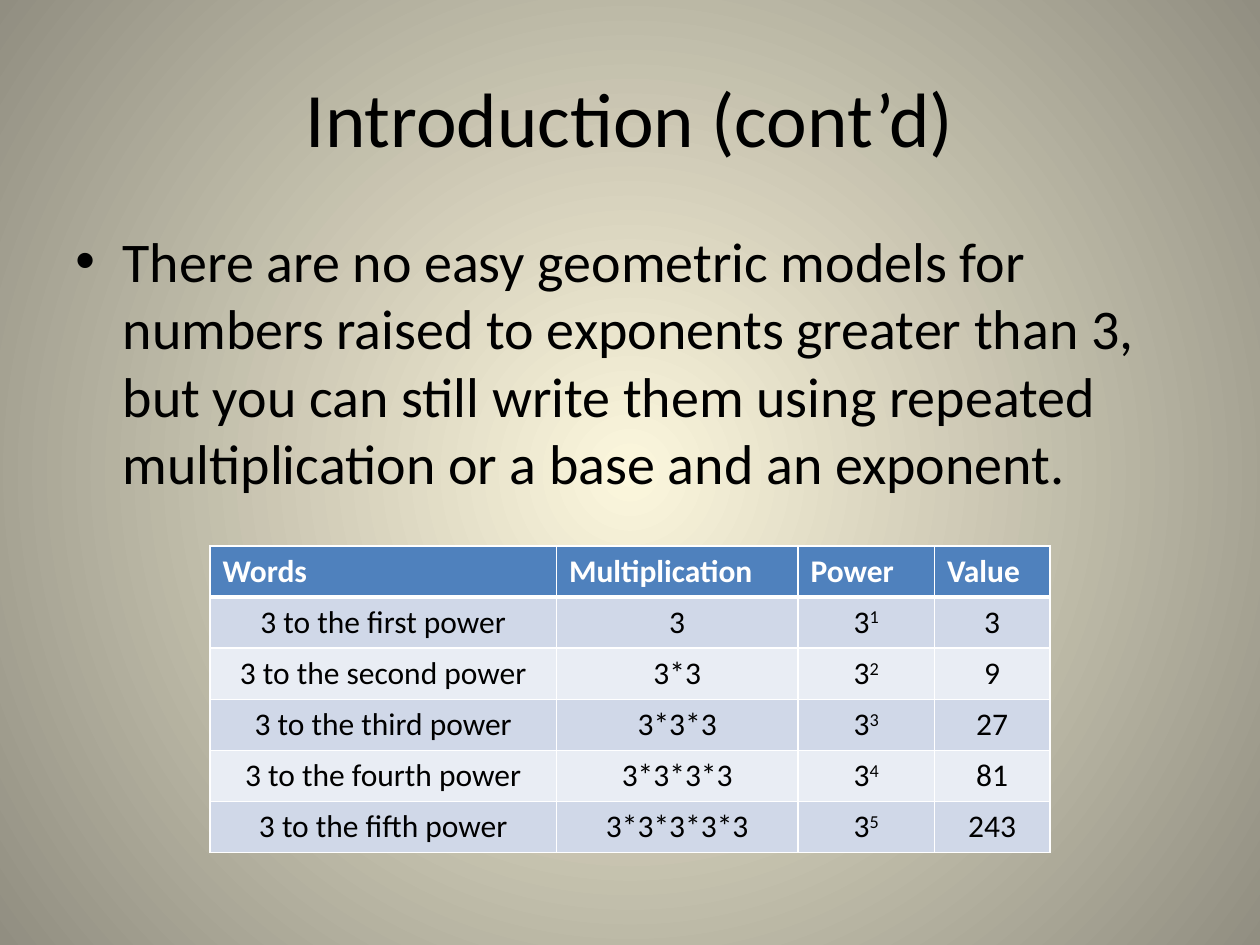
from lxml.etree import SubElement
from pptx import Presentation
from pptx.dml.color import RGBColor
from pptx.enum.text import MSO_ANCHOR, PP_ALIGN
from pptx.oxml import parse_xml
from pptx.oxml.ns import nsdecls, qn
from pptx.util import Pt

BLACK = RGBColor(0x00, 0x00, 0x00)
WHITE = RGBColor(0xFF, 0xFF, 0xFF)
CREAM = RGBColor(0xFC, 0xF7, 0xDD)
STONE = RGBColor(0x91, 0x8E, 0x81)
HEADER_BLUE = RGBColor(0x4F, 0x81, 0xBD)
BANDS = (RGBColor(0xE9, 0xED, 0xF4), RGBColor(0xD0, 0xD8, 0xE8))

HEADINGS = ("Words", "Multiplication", "Power", "Value")
ORDINALS = ("first", "second", "third", "fourth", "fifth")
COLUMN_WIDTHS = (198, 138, 78, 66)
ROW_HEIGHT = 29.2
BASE = 3
STATEMENT = (
    "There are no easy geometric models for numbers raised to exponents "
    "greater than 3, but you can still write them using repeated "
    "multiplication or a base and an exponent."
)


class SlideBuilder:
    """Hold the text style and the current slide, and add its elements."""

    def __init__(self, slide, font_name):
        self.slide = slide
        self.font_name = font_name

    def style(self, font, size, color, **values):
        """Apply the font name and the given values."""
        font.color.rgb = color
        values |= {"name": self.font_name, "size": Pt(size)}
        for key, value in values.items():
            setattr(font, key, value)

    def background(self, center, edge):
        """Fill the slide with a circular gradient."""
        fill = self.slide.background.fill
        fill.gradient()
        for stop, color in zip(fill.gradient_stops, (center, edge)):
            stop.color.rgb = color
        linear = self.slide.element.find(".//" + qn("a:lin"))
        circle = parse_xml(
            f'<a:path {nsdecls("a")} path="circle">'
            '<a:fillToRect l="50000" t="50000" r="50000" b="50000"/></a:path>'
        )
        linear.getparent().replace(linear, circle)

    def title(self, text, left, top, width, height):
        """Place and format the title placeholder."""
        title = self.slide.shapes.title
        box = {"left": left, "top": top, "width": width, "height": height}
        for key, value in box.items():
            setattr(title, key, Pt(value))
        title.text_frame.vertical_anchor = MSO_ANCHOR.MIDDLE
        paragraph = title.text_frame.paragraphs[0]
        paragraph.alignment = PP_ALIGN.CENTER
        run = paragraph.add_run()
        run.text = text
        self.style(run.font, 44, BLACK)

    def bullet(self, text, left, top, width, height):
        """Add a text box with one bulleted paragraph."""
        box = self.slide.shapes.add_textbox(Pt(left), Pt(top), Pt(width), Pt(height))
        box.text_frame.word_wrap = True
        paragraph = box.text_frame.paragraphs[0]
        properties = paragraph._p.get_or_add_pPr()
        properties.set("marL", str(Pt(27)))
        properties.set("indent", str(Pt(-27)))
        SubElement(properties, qn("a:buFont"), typeface="Arial")
        SubElement(properties, qn("a:buChar"), char="•")
        run = paragraph.add_run()
        run.text = text
        self.style(run.font, 32, BLACK)

    def borders(self, cell, widths):
        """Draw white borders on the left, right, top and bottom."""
        properties = cell._tc.get_or_add_tcPr()
        for side, width in zip("LRTB", widths):
            properties.append(parse_xml(
                f'<a:ln{side} {nsdecls("a")} w="{Pt(width)}"><a:solidFill>'
                f'<a:srgbClr val="{WHITE}"/></a:solidFill></a:ln{side}>'
            ))

    def cell(self, cell, row, text, exponent=""):
        """Fill a table cell with its text and optional exponent."""
        is_header = row == 0
        self.borders(cell, (1, 1, 3 if row == 1 else 1, 3 if is_header else 1))
        cell.fill.solid()
        cell.fill.fore_color.rgb = HEADER_BLUE if is_header else BANDS[row % 2]
        paragraph = cell.text_frame.paragraphs[0]
        paragraph.alignment = PP_ALIGN.LEFT if is_header else PP_ALIGN.CENTER
        for part in filter(None, (text, exponent)):
            run = paragraph.add_run()
            run.text = part
            self.style(run.font, 18, WHITE if is_header else BLACK, bold=is_header)
        if exponent:
            run.font._element.set("baseline", "30000")

    def table(self, rows, left, top):
        """Add the table from rows of text and exponent tuples."""
        table = self.slide.shapes.add_table(
            len(rows), len(COLUMN_WIDTHS), Pt(left), Pt(top),
            Pt(sum(COLUMN_WIDTHS)), Pt(ROW_HEIGHT * len(rows)),
        ).table
        for column, width in zip(table.columns, COLUMN_WIDTHS):
            column.width = Pt(width)
        for row, contents in enumerate(rows):
            table.rows[row].height = Pt(ROW_HEIGHT)
            for column, content in enumerate(contents):
                self.cell(table.cell(row, column), row, *content)


def power_rows():
    """Return the heading row and one row for each power of the base."""
    rows = [[(heading,) for heading in HEADINGS]]
    for exponent, ordinal in enumerate(ORDINALS, 1):
        rows.append([
            (f"{BASE} to the {ordinal} power",),
            ("*".join([str(BASE)] * exponent),),
            (str(BASE), str(exponent)),
            (str(BASE**exponent),),
        ])
    return rows


def main():
    """Build and save the slide."""
    presentation = Presentation()
    presentation.slide_width = Pt(720)
    presentation.slide_height = Pt(540)
    slide = presentation.slides.add_slide(presentation.slide_layouts[5])
    builder = SlideBuilder(slide, "Calibri")
    builder.background(CREAM, STONE)
    builder.title("Introduction (cont’d)", 36, 21.6, 648, 90)
    builder.bullet(STATEMENT, 36, 126, 648, 356.4)
    builder.table(power_rows(), 120, 312)
    presentation.save("out.pptx")


if __name__ == "__main__":
    main()
